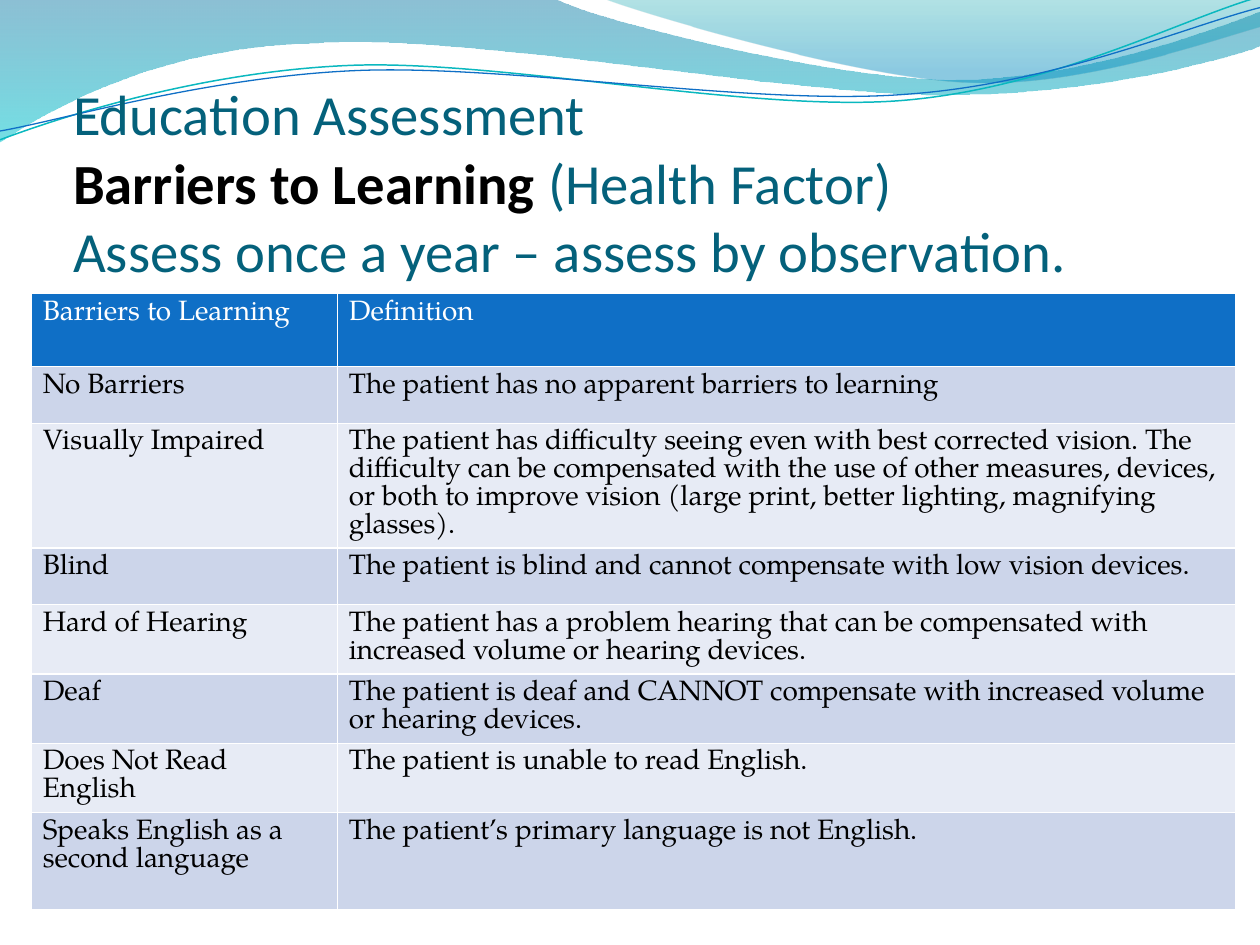
import math

from lxml import etree
from pptx import Presentation
from pptx.dml.color import RGBColor
from pptx.enum.text import MSO_ANCHOR, MSO_AUTO_SIZE, PP_ALIGN
from pptx.oxml.ns import qn
from pptx.util import Inches, Pt

LEFT = PP_ALIGN.LEFT
BOTTOM = MSO_ANCHOR.BOTTOM
NO_AUTOFIT = MSO_AUTO_SIZE.NONE

WHITE = RGBColor(0xFF, 0xFF, 0xFF)
BLACK = RGBColor(0x00, 0x00, 0x00)
TITLE_TEAL = RGBColor(0x04, 0x61, 0x7B)
BLUE = RGBColor(0x0F, 0x6F, 0xC6)
TURQUOISE = RGBColor(0x0A, 0xB8, 0xBF)
BAND_DARK = RGBColor(0xCC, 0xD5, 0xEA)
BAND_LIGHT = RGBColor(0xE7, 0xEB, 0xF5)
DEEP_BLUE = RGBColor(0x00, 0x74, 0xA1)
AQUA = RGBColor(0x00, 0xC6, 0xCF)
SEA_GREEN = RGBColor(0x00, 0xA1, 0xA9)
SKY_BLUE = RGBColor(0x00, 0x8B, 0xBF)

LINE_ROTATION = 357.3

# A pair is a straight segment's end; six numbers are a cubic curve's controls and end.
LEFT_WAVE = [
    (0, 0), (4.4, -0.01),
    (4.76, 0.17, 6.64, 0.63, 7.58, 0.63), (8.53, 0.63, 9.58, 0.26, 10, 0.09),
    (10.01, 0.36),
    (9.83, 0.44, 8.7, 0.76, 7.46, 0.75), (6.22, 0.75, 3.82, 0.28, 2.57, 0.34),
    (1.29, 0.36, 0.46, 0.83, -0.01, 1.13), (0, 0),
]
RIGHT_WAVE = [
    (4.79, -0.01),
    (5.09, 0.11, 6.82, 0.62, 7.69, 0.65), (8.56, 0.69, 9.61, 0.32, 10, 0.21),
    (10, 0), (4.79, -0.01),
]
TURQUOISE_LINE = [
    (0, 1.11),
    (0.48, 0.93, 1.58, 0.57, 2.77, 0.52), (3.95, 0.47, 5.93, 0.89, 7.13, 0.8),
    (8.33, 0.71, 9.38, 0.15, 9.98, -0.02),
]
BLUE_LINE = [
    (0, 1.04),
    (0.47, 0.96, 1.64, 0.61, 2.83, 0.56), (4.03, 0.51, 5.97, 0.84, 7.17, 0.75),
    (8.36, 0.67, 9.41, 0.21, 10, 0.06),
]

TITLE_LINES = [
    [("Education Assessment", TITLE_TEAL, False)],
    [("Barriers to Learning ", BLACK, True), ("(Health Factor)", TITLE_TEAL, False)],
    [("Assess once a year – assess by observation.", TITLE_TEAL, False)],
]

COLUMN_WIDTHS = [2.43, 7.13]
ROW_HEIGHTS = [0.58, 0.45, 0.99, 0.45, 0.55, 0.55, 0.55, 0.77]
BARRIERS = [
    ("Barriers to Learning", "Definition"),
    ("No Barriers", "The patient has no apparent barriers to learning"),
    ("Visually Impaired",
     "The patient has difficulty seeing even with best corrected vision. "
     "The difficulty can be compensated with the use of other measures, devices, "
     "or both to improve vision (large print, better lighting, magnifying glasses)."),
    ("Blind", "The patient is blind and cannot compensate with low vision devices."),
    ("Hard of Hearing",
     "The patient has a problem hearing that can be compensated with increased "
     "volume or hearing devices."),
    ("Deaf",
     "The patient is deaf and CANNOT compensate with increased volume or hearing devices."),
    ("Does Not Read English", "The patient is unable to read English."),
    ("Speaks English as a second language",
     "The patient’s primary language is not English."),
]


def to_local(x, y, box, rotation):
    """Turn a slide point back by the rotation and measure it from the box's corner."""
    left, top, width, height = box
    angle = math.radians(-rotation)
    across, down = x - left - width / 2, y - top - height / 2
    return (width / 2 + across * math.cos(angle) - down * math.sin(angle),
            height / 2 + across * math.sin(angle) + down * math.cos(angle))


class SlideBuilder:
    title_font = "Calibri"
    title_size = Pt(32.4)
    table_font = "TeX Gyre Pagella"
    table_size = Pt(16)

    def __init__(self, slide):
        self.slide = slide

    def outline(self, segments, box, close, rotation=0):
        """Add a freeform in the box, with its six-number segments as cubic curves."""
        ends = [(Inches(segment[-2]), Inches(segment[-1])) for segment in segments]
        builder = self.slide.shapes.build_freeform(*ends[0])
        builder.add_line_segments(ends[1:], close=close)
        shape = builder.convert_to_shape()
        shape.shadow.inherit = False
        shape.left, shape.top, shape.width, shape.height = map(Inches, box)
        shape.rotation = rotation
        outline = next(shape.element.iter(qn("a:path")))
        outline.set("w", str(shape.width))
        outline.set("h", str(shape.height))
        for step, segment in zip(list(outline), segments):
            for point in list(step):
                step.remove(point)
            if len(segment) == 6:
                step_line, step = step, etree.Element(qn("a:cubicBezTo"))
                outline.replace(step_line, step)
            for x, y in zip(segment[::2], segment[1::2]):
                local_x, local_y = to_local(x, y, box, rotation)
                point = etree.SubElement(step, qn("a:pt"))
                point.set("x", str(Inches(local_x)))
                point.set("y", str(Inches(local_y)))
        return shape

    def wave(self, segments, box, stops):
        """Add a filled wave; each stop is (position, colour, opacity in percent)."""
        shape = self.outline(segments, box, close=True)
        shape.line.fill.background()
        shape.fill.gradient()
        shape.fill.gradient_angle = 270
        for stop, (position, color, _) in zip(shape.fill.gradient_stops, stops):
            stop.position = position
            stop.color.rgb = color
        gradient = shape.element.spPr.find(qn("a:gradFill"))
        for color_element, (_, _, opacity) in zip(gradient.iter(qn("a:srgbClr")), stops):
            alpha = etree.SubElement(color_element, qn("a:alpha"))
            alpha.set("val", str(opacity * 1000))

    def curve(self, segments, box, color, width):
        shape = self.outline(segments, box, close=False, rotation=LINE_ROTATION)
        shape.fill.background()
        shape.line.color.rgb = color
        shape.line.width = Pt(width)

    def title(self, lines, left, top, width, height):
        title = self.slide.shapes.title
        title.left, title.top = Inches(left), Inches(top)
        title.width, title.height = Inches(width), Inches(height)
        frame = title.text_frame
        frame.auto_size = NO_AUTOFIT
        frame.word_wrap = True
        frame.vertical_anchor = BOTTOM
        frame.margin_left = frame.margin_right = frame.margin_bottom = 0
        paragraph = frame.paragraphs[0]
        paragraph.alignment = LEFT
        for index, line in enumerate(lines):
            if index:
                paragraph.add_line_break()
            for text, color, bold in line:
                run = paragraph.add_run()
                run.text = text
                run.font.name = self.title_font
                run.font.size = self.title_size
                run.font.color.rgb = color
                run.font.bold = bold
        # Bring the title in front of the waves.
        title.element.getparent().append(title.element)

    def table(self, rows, left, top):
        table = self.slide.shapes.add_table(
            len(rows), len(COLUMN_WIDTHS), Inches(left), Inches(top),
            Inches(sum(COLUMN_WIDTHS)), Inches(sum(ROW_HEIGHTS))).table
        for column, width in zip(table.columns, COLUMN_WIDTHS):
            column.width = Inches(width)
        for row, height in zip(table.rows, ROW_HEIGHTS):
            row.height = Inches(height)
        for row_index, texts in enumerate(rows):
            band = BAND_DARK if row_index % 2 else BAND_LIGHT
            fill, color = (band, BLACK) if row_index else (BLUE, WHITE)
            for column_index, text in enumerate(texts):
                self.cell(table.cell(row_index, column_index), text, fill, color)

    def cell(self, cell, text, fill, color):
        cell.fill.solid()
        cell.fill.fore_color.rgb = fill
        cell.margin_left = cell.margin_right = Inches(0.09)
        cell.text_frame.text = text
        paragraph = cell.text_frame.paragraphs[0]
        paragraph.line_spacing = self.table_size
        font = paragraph.runs[0].font
        font.name = self.table_font
        font.size = self.table_size
        font.bold = False
        font.color.rgb = color


def main():
    presentation = Presentation()
    presentation.slide_width, presentation.slide_height = Inches(10), Inches(7.5)
    title_only = presentation.slide_layouts[5]
    builder = SlideBuilder(presentation.slides.add_slide(title_only))
    builder.wave(LEFT_WAVE, (-0.01, -0.01, 10.02, 1.14), [(0, DEEP_BLUE, 45), (1, AQUA, 55)])
    builder.wave(RIGHT_WAVE, (4.79, -0.01, 5.21, 0.7), [(0, SEA_GREEN, 30), (0.8, SKY_BLUE, 45)])
    builder.curve(TURQUOISE_LINE, (-0.02, 0.22, 10.02, 0.71), TURQUOISE, 0.85)
    builder.curve(BLUE_LINE, (-0.02, 0.3, 10.03, 0.58), BLUE, 0.75)
    builder.title(TITLE_LINES, 0.58, 1.17, 8.75, 1.08)
    builder.table(BARRIERS, 0.25, 2.33)
    presentation.save("out.pptx")


if __name__ == "__main__":
    main()
